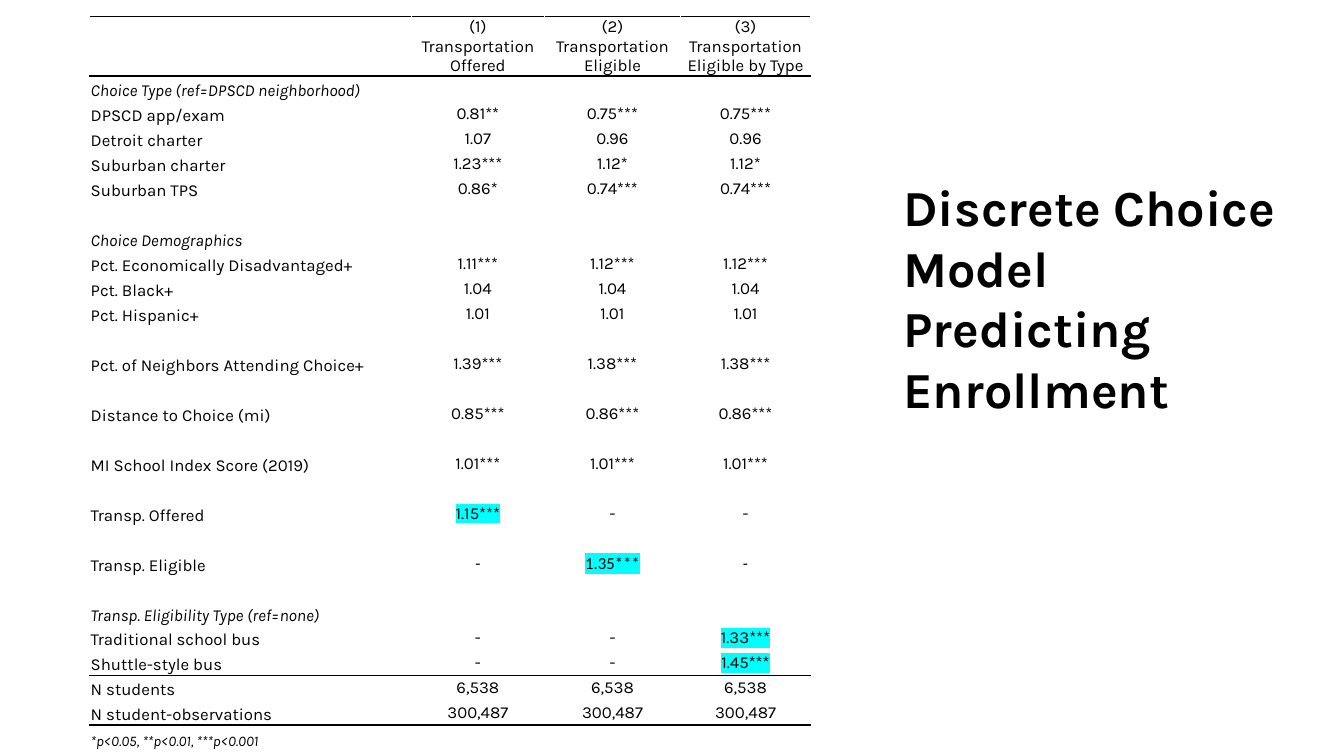
from lxml.etree import SubElement
from pptx import Presentation
from pptx.dml.color import RGBColor
from pptx.enum.text import MSO_ANCHOR, MSO_AUTO_SIZE, PP_ALIGN
from pptx.oxml.ns import qn
from pptx.util import Inches, Pt

TITLE = "Discrete Choice Model Predicting Enrollment"
# A one-item row is a section heading; an empty row is a gap.
ROWS = [
    ("", "(1) Transportation Offered", "(2) Transportation Eligible",
     "(3) Transportation Eligible by Type"),
    ("Choice Type (ref=DPSCD neighborhood)",),
    ("DPSCD app/exam", "0.81**", "0.75***", "0.75***"),
    ("Detroit charter", "1.07", "0.96", "0.96"),
    ("Suburban charter", "1.23***", "1.12*", "1.12*"),
    ("Suburban TPS", "0.86*", "0.74***", "0.74***"),
    (),
    ("Choice Demographics",),
    ("Pct. Economically Disadvantaged+", "1.11***", "1.12***", "1.12***"),
    ("Pct. Black+", "1.04", "1.04", "1.04"),
    ("Pct. Hispanic+", "1.01", "1.01", "1.01"),
    (),
    ("Pct. of Neighbors Attending Choice+", "1.39***", "1.38***", "1.38***"),
    (),
    ("Distance to Choice (mi)", "0.85***", "0.86***", "0.86***"),
    (),
    ("MI School Index Score (2019)", "1.01***", "1.01***", "1.01***"),
    (),
    ("Transp. Offered", "1.15***", "-", "-"),
    (),
    ("Transp. Eligible", "-", "1.35***", "-"),
    (),
    ("Transp. Eligibility Type (ref=none)",),
    ("Traditional school bus", "-", "-", "1.33***"),
    ("Shuttle-style bus", "-", "-", "1.45***"),
    ("N students", "6,538", "6,538", "6,538"),
    ("N student-observations", "300,487", "300,487", "300,487"),
    ("*p<0.05, **p<0.01, ***p<0.001",),
]
TRANSPORT_ROWS = {"Transp. Offered", "Transp. Eligible",
                  "Traditional school bus", "Shuttle-style bus"}
CALIBRI_ROW = "Transp. Eligible"
NOTE_ROW = len(ROWS) - 1
RULES_ABOVE = {0, 1, NOTE_ROW - 2, NOTE_ROW}
COLORS = {"text": "000000", "rule": "000000", "plain": "FFFFFF", "mark": "00FFFF"}

LEFT, TOP, HEIGHT = 0.89, 0.16, 7.18
COL_WIDTHS = [3.19, 1.32, 1.35, 1.29]
HEADER_HEIGHT = 0.49
ROW_HEIGHT = (HEIGHT - HEADER_HEIGHT) / NOTE_ROW


def add_run(p, text, size, font="Karla", bold=False, italic=False, mark=False):
    r = p.add_run()
    r.text = text
    f = r.font
    f.size, f.bold, f.italic = Pt(size), bold, italic
    f.color.rgb = RGBColor.from_string(COLORS["text"])
    if mark:
        highlight = SubElement(f.fill._xPr, qn("a:highlight"))
        SubElement(highlight, qn("a:srgbClr"), val=COLORS["mark"])
    f.name = font


def set_borders(cell, row):
    tcPr = cell._tc.get_or_add_tcPr()
    ruled = {"lnT": row in RULES_ABOVE, "lnB": row + 1 in RULES_ABOVE}
    for side in ("lnL", "lnR", "lnT", "lnB"):
        ln = SubElement(tcPr, qn("a:" + side), w=str(Pt(1)))
        fill = SubElement(ln, qn("a:solidFill"))
        color = COLORS["rule" if ruled.get(side) else "plain"]
        SubElement(fill, qn("a:srgbClr"), val=color)


def fill_cell(cell, row, col):
    values = ROWS[row]
    text = values[col] if col < len(values) else ""
    set_borders(cell, row)
    cell.fill.background()
    cell.margin_left = cell.margin_right = cell.margin_top = Inches(0.01)
    cell.margin_bottom = 0
    cell.vertical_anchor = MSO_ANCHOR.MIDDLE if col else MSO_ANCHOR.BOTTOM
    p = cell.text_frame.paragraphs[0]
    p.alignment = PP_ALIGN.CENTER if col else PP_ALIGN.LEFT
    if not text:
        SubElement(p._p, qn("a:endParaRPr"), sz="1200")
        return
    add_run(p, text, 10.5 if row == NOTE_ROW else 12,
            font="Calibri" if col and values[0] == CALIBRI_ROW else "Karla",
            italic=len(values) == 1,
            mark=col > 0 and values[0] in TRANSPORT_ROWS and text != "-")


prs = Presentation()
prs.slide_width, prs.slide_height = Inches(13.33), Inches(7.5)
s = prs.slides.add_slide(prs.slide_layouts[5])

frame = s.shapes.add_table(len(ROWS), len(COL_WIDTHS), Inches(LEFT), Inches(TOP),
                           Inches(sum(COL_WIDTHS)), Inches(HEIGHT))
table = frame.table
table.first_row = table.horz_banding = False
for column, width in zip(table.columns, COL_WIDTHS):
    column.width = Inches(width)
for i, table_row in enumerate(table.rows):
    table_row.height = Inches(ROW_HEIGHT if i else HEADER_HEIGHT)
    for j, cell in enumerate(table_row.cells):
        fill_cell(cell, i, j)
table.cell(NOTE_ROW, 0).merge(table.cell(NOTE_ROW, len(COL_WIDTHS) - 1))

title = s.shapes.title
title.left, title.top = Inches(8.86), Inches(1.7)
title.width, title.height = Inches(3.99), Inches(3.64)
tf = title.text_frame
tf.word_wrap = True
tf.auto_size = MSO_AUTO_SIZE.NONE
tf.vertical_anchor = MSO_ANCHOR.TOP
p = tf.paragraphs[0]
p.alignment = PP_ALIGN.LEFT
add_run(p, TITLE, 36, bold=True)

prs.save("out.pptx")
